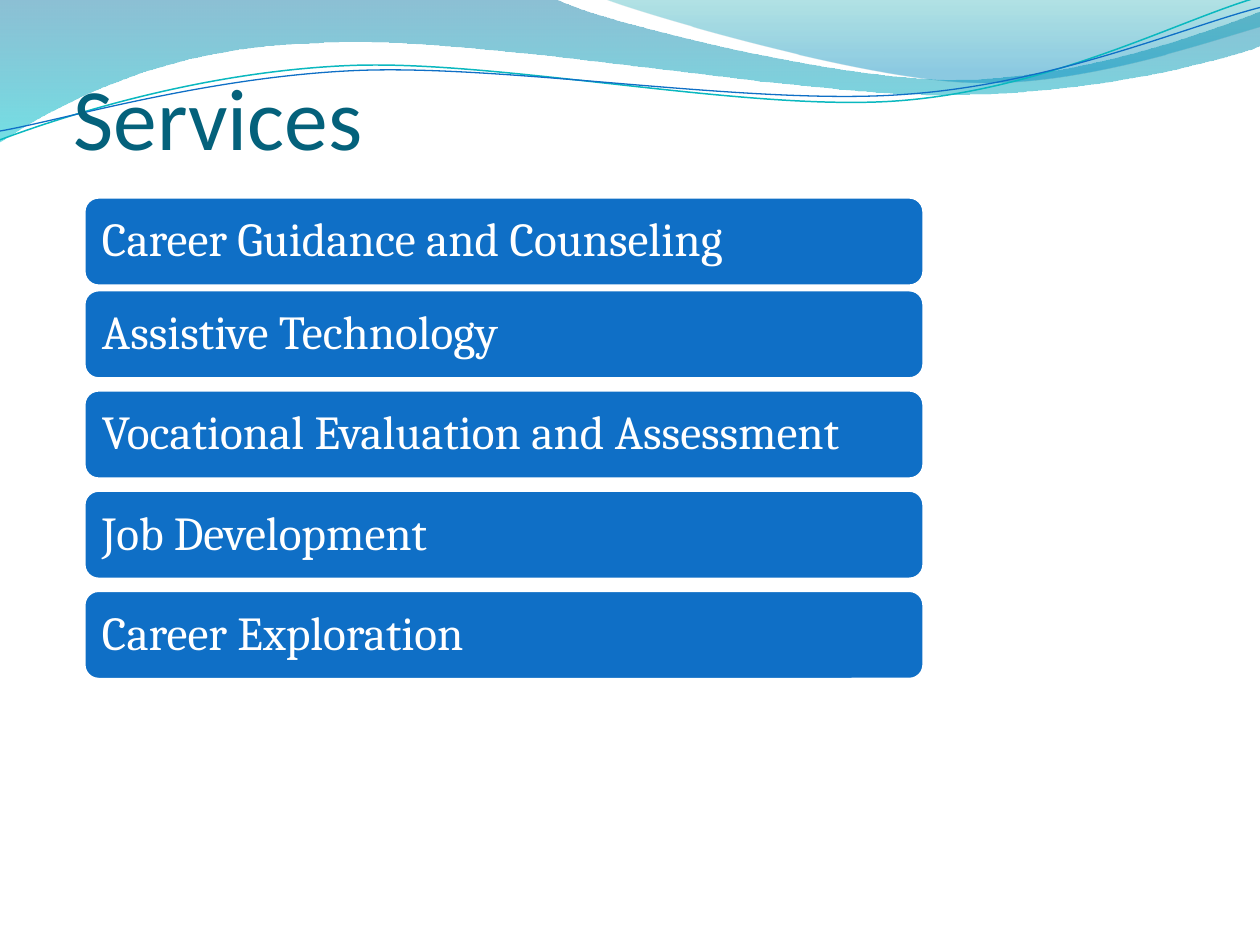
from math import cos, radians, sin

from lxml.etree import SubElement
from pptx import Presentation
from pptx.dml.color import RGBColor
from pptx.enum.shapes import MSO_SHAPE
from pptx.enum.text import MSO_ANCHOR, MSO_AUTO_SIZE, PP_ALIGN
from pptx.oxml.ns import qn
from pptx.util import Cm, Pt

TITLE = "Services"
SERVICES = [
    "Career Guidance and Counseling",
    "Assistive Technology",
    "Vocational Evaluation and Assessment",
    "Job Development",
    "Career Exploration",
]
BLUE, WHITE, TEAL = "0F6FC6", "FFFFFF", "04617B"

BANDS = [
    {"start": (0, 0),
     "segments": [
         [(4.4, -0.01)],
         [(4.76, 0.17), (6.64, 0.63), (7.58, 0.63)],
         [(8.53, 0.63), (9.58, 0.26), (10, 0.09)],
         [(10.01, 0.36)],
         [(9.83, 0.44), (8.7, 0.76), (7.46, 0.75)],
         [(6.22, 0.75), (3.82, 0.28), (2.57, 0.34)],
         [(1.29, 0.36), (0.46, 0.83), (-0.01, 1.13)]],
     "stops": [(0, "0074A1", 45), (1, "00C6CF", 55)]},
    {"start": (4.79, -0.01),
     "segments": [
         [(5.09, 0.11), (6.82, 0.62), (7.69, 0.65)],
         [(8.56, 0.69), (9.61, 0.32), (10, 0.21)],
         [(10, 0)]],
     "stops": [(0, "00A1A9", 30), (0.8, "008BBF", 45)]},
]
WAVES = [
    {"start": (0, 1.11), "center": (4.99, 0.575), "color": "0AB8BF", "width": 0.85,
     "segments": [
         [(0.48, 0.93), (1.58, 0.57), (2.77, 0.52)],
         [(3.95, 0.47), (5.93, 0.89), (7.13, 0.8)],
         [(8.33, 0.71), (9.38, 0.15), (9.98, -0.02)]]},
    {"start": (0, 1.04), "center": (5, 0.59), "color": BLUE, "width": 0.75,
     "segments": [
         [(0.47, 0.96), (1.64, 0.61), (2.83, 0.56)],
         [(4.03, 0.51), (5.97, 0.84), (7.17, 0.75)],
         [(8.36, 0.67), (9.41, 0.21), (10, 0.06)]]},
]
WAVE_TILT = 2.7
BAR_LEFT, BAR_WIDTH, BAR_HEIGHT = 1.69, 16.94, 1.8
FIRST_TOP, SECOND_TOP, BAR_PITCH = 3.97, 5.84, 2.02


def rgb(value):
    return RGBColor.from_string(value)


def to_emu(point):
    return tuple(Cm(2.54 * v) for v in point)


def turn(point, center, degrees):
    (x, y), (cx, cy), a = point, center, radians(degrees)
    dx, dy = x - cx, y - cy
    return cx + dx * cos(a) - dy * sin(a), cy + dx * sin(a) + dy * cos(a)


def add_outline(s, start, segments, close):
    builder = s.shapes.build_freeform(*to_emu(start))
    builder.add_line_segments([to_emu(pt) for seg in segments for pt in seg], close=close)
    sp = builder.convert_to_shape()
    sp.shadow.inherit = False
    lines = iter(list(sp._element.iter(qn("a:lnTo"))))
    for segment in segments:
        first, *others = [next(lines) for _ in segment]
        if others:
            first.tag = qn("a:cubicBezTo")
            for line in others:
                first.append(line[0])
                line.getparent().remove(line)
    return sp


def add_band(s, band):
    sp = add_outline(s, band["start"], band["segments"], True)
    sp.line.fill.background()
    sp.fill.gradient()
    sp.fill.gradient_angle = 270
    for stop, (position, color, _) in zip(sp.fill.gradient_stops, band["stops"]):
        stop.position = position
        stop.color.rgb = rgb(color)
    colors = sp._element.spPr.iter(qn("a:srgbClr"))
    for element, (_, _, alpha) in zip(list(colors), band["stops"]):
        SubElement(element, qn("a:alpha")).set("val", str(alpha * 1000))


def add_wave(s, wave):
    def level(point):
        return turn(point, wave["center"], WAVE_TILT)

    segments = [[level(pt) for pt in seg] for seg in wave["segments"]]
    sp = add_outline(s, level(wave["start"]), segments, False)
    sp.rotation = -WAVE_TILT
    sp.fill.background()
    sp.line.color.rgb = rgb(wave["color"])
    sp.line.width = Pt(wave["width"])


def write(tf, text, font, size, color, anchor, insets):
    tf.auto_size = MSO_AUTO_SIZE.NONE
    tf.word_wrap = True
    tf.vertical_anchor = anchor
    tf.margin_left, tf.margin_top, tf.margin_right, tf.margin_bottom = map(Cm, insets)
    p = tf.paragraphs[0]
    p.alignment = PP_ALIGN.LEFT
    r = p.add_run()
    r.text = text
    r.font.name = font
    r.font.size = Pt(size)
    r.font.color.rgb = rgb(color)
    return p


def add_bar(s, top, text):
    sp = s.shapes.add_shape(MSO_SHAPE.ROUNDED_RECTANGLE, Cm(BAR_LEFT), Cm(top),
                            Cm(BAR_WIDTH), Cm(BAR_HEIGHT))
    sp.shadow.inherit = False
    sp.fill.solid()
    sp.fill.fore_color.rgb = rgb(BLUE)
    sp.line.color.rgb = rgb(WHITE)
    sp.line.width = Pt(2)
    p = write(sp.text_frame, text, "Cambria", 27, WHITE, MSO_ANCHOR.MIDDLE, [0.28] * 4)
    p.line_spacing = 0.9


def main():
    prs = Presentation()
    prs.slide_width, prs.slide_height = Cm(25.4), Cm(19.05)
    s = prs.slides.add_slide(prs.slide_layouts[5])
    for band in BANDS:
        add_band(s, band)
    for wave in WAVES:
        add_wave(s, wave)
    for i, text in enumerate(SERVICES):
        add_bar(s, SECOND_TOP + (i - 1) * BAR_PITCH if i else FIRST_TOP, text)
    title = s.shapes.title
    title.left, title.top, title.width, title.height = map(Cm, (1.48, 1.96, 22.43, 1.42))
    write(title.text_frame, TITLE, "Calibri", 50, TEAL, MSO_ANCHOR.BOTTOM, (0, 0.13, 0, 0))
    s.shapes._spTree.append(title._element)
    prs.save("out.pptx")


if __name__ == "__main__":
    main()
